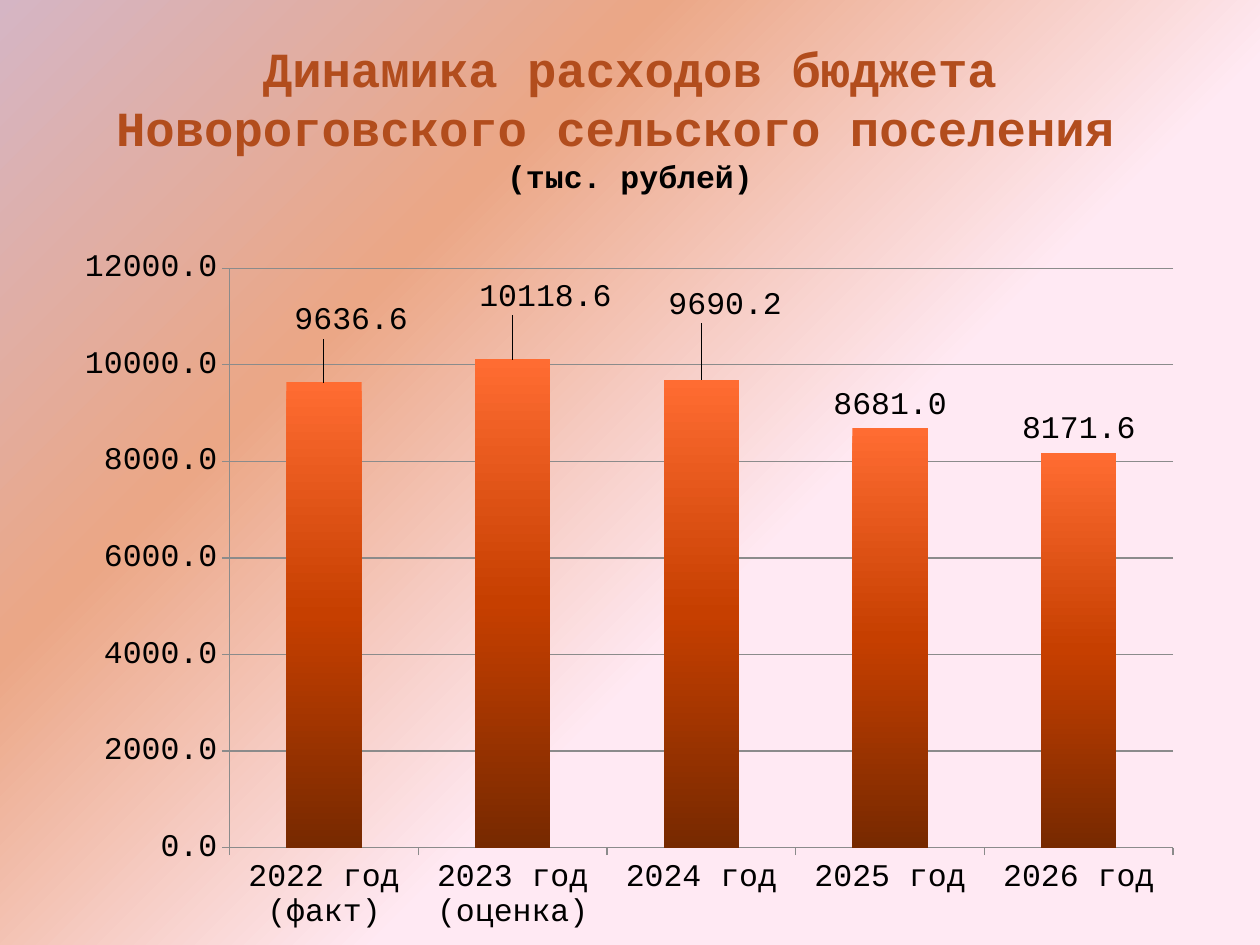
from pptx import Presentation
from pptx.chart.data import CategoryChartData
from pptx.dml.color import RGBColor
from pptx.enum.chart import XL_CHART_TYPE as ChartType
from pptx.enum.chart import XL_LABEL_POSITION as LabelPosition
from pptx.enum.chart import XL_TICK_MARK as TickMark
from pptx.enum.text import MSO_ANCHOR as Anchor
from pptx.enum.text import PP_ALIGN as Align
from pptx.oxml import parse_xml
from pptx.oxml.ns import nsdecls
from pptx.util import Inches, Pt

FONT = "Courier New"
BLACK = RGBColor(0x00, 0x00, 0x00)
RUST = RGBColor(0xB2, 0x4D, 0x1D)
GRAY = RGBColor(0x8B, 0x8B, 0x8B)
PINK = RGBColor(0xFF, 0xE9, 0xF3)
PEACH = RGBColor(0xEB, 0xA7, 0x86)
MAUVE = RGBColor(0xD5, 0xB5, 0xC4)
BAR_TOP = RGBColor(0xFF, 0x6C, 0x32)
BAR_MIDDLE = RGBColor(0xC6, 0x3F, 0x00)
BAR_BOTTOM = RGBColor(0x77, 0x29, 0x00)

TITLE_RUNS = [
    ("Динамика расходов бюджета Новороговского сельского поселения ",
     {"size": Pt(28), "bold": True, "name": FONT}, RUST),
    ("(тыс. рублей)", {"size": Pt(18), "bold": True, "name": FONT}, BLACK),
]
EXPENSES = [
    ("2022 год (факт)", 9636.6),
    ("2023 год (оценка)", 10118.6),
    ("2024 год", 9690.2),
    ("2025 год", 8681.0),
    ("2026 год", 8171.6),
]
# Shift of the first labels from their usual place, in parts of the chart
LABEL_SHIFTS = [(0.024, -0.054), (0.029, -0.054), (0.021, -0.072)]
PLOT_AREA = {"x": 0.147, "y": 0.046, "w": 0.832, "h": 0.817}
BACKGROUND_STOPS = [(40, PINK), (70, PEACH), (100, MAUVE)]
BAR_STOPS = [(0, BAR_TOP), (50, BAR_MIDDLE), (100, BAR_BOTTOM)]


def gradient_xml(stops, direction):
    stop_xml = "".join(
        f'<a:gs pos="{percent * 1000}"><a:srgbClr val="{color}"/></a:gs>'
        for percent, color in stops)
    return (f'<a:gradFill {nsdecls("a")} rotWithShape="1">'
            f"<a:gsLst>{stop_xml}</a:gsLst>{direction}</a:gradFill>")


def layout_element(values, modes=""):
    parts = "".join(f'<c:{key} val="{value}"/>' for key, value in values.items())
    return parse_xml(f'<c:layout {nsdecls("c")}><c:manualLayout>{modes}{parts}'
                     "</c:manualLayout></c:layout>")


def set_font(font, values, color):
    for name, value in values.items():
        setattr(font, name, value)
    font.color.rgb = color


def add_background(slide):
    direction = ('<a:path path="circle"><a:fillToRect l="100000" t="100000"/>'
                 "</a:path>")
    background = parse_xml(
        f'<p:bg {nsdecls("p")}><p:bgPr>{gradient_xml(BACKGROUND_STOPS, direction)}'
        f'<a:effectLst {nsdecls("a")}/></p:bgPr></p:bg>')
    slide.element.cSld.insert(0, background)


def add_title(slide):
    box = slide.shapes.add_textbox(Inches(0.5), Inches(0.3), Inches(9), Inches(1.25))
    frame = box.text_frame
    frame.word_wrap = True
    frame.vertical_anchor = Anchor.MIDDLE
    paragraph = frame.paragraphs[0]
    paragraph.alignment = Align.CENTER
    for index, (text, values, color) in enumerate(TITLE_RUNS):
        if index:
            paragraph.add_line_break()
        run = paragraph.add_run()
        run.text = text
        set_font(run.font, values, color)


def add_expense_chart(slide):
    data = CategoryChartData(number_format="0.0")
    data.categories = [year for year, _ in EXPENSES]
    data.add_series("Series 1", [amount for _, amount in EXPENSES])
    chart = slide.shapes.add_chart(
        ChartType.COLUMN_CLUSTERED, Inches(0.5), Inches(1.87),
        Inches(9), Inches(5.63), data).chart
    chart.has_title = chart.has_legend = False
    font_values = {"size": Pt(18), "name": FONT}
    set_font(chart.font, font_values, BLACK)

    value_axis = chart.value_axis
    value_axis.minimum_scale, value_axis.maximum_scale = 0, 12000
    value_axis.major_unit = 2000
    value_axis.tick_labels.number_format = "0.0"
    value_axis.tick_labels.number_format_is_linked = False
    value_axis.has_major_gridlines = True
    for line in (value_axis.format.line, chart.category_axis.format.line,
                 value_axis.major_gridlines.format.line):
        line.color.rgb = GRAY
        line.width = Pt(0.75)
    for axis in (value_axis, chart.category_axis):
        axis.major_tick_mark = TickMark.OUTSIDE

    plot = chart.plots[0]
    plot.gap_width = 150
    plot.vary_by_categories = False
    series = plot.series[0]
    series.format.fill.gradient()
    bar_fill = chart.element.xpath(".//c:ser/c:spPr/a:gradFill")[0]
    direction = '<a:lin ang="5400000" scaled="0"/>'
    bar_fill.getparent().replace(
        bar_fill, parse_xml(gradient_xml(BAR_STOPS, direction)))

    labels = series.data_labels
    labels.show_value = True
    labels.number_format = "0.0"
    labels.number_format_is_linked = False
    labels.position = LabelPosition.OUTSIDE_END
    set_font(labels.font, font_values, BLACK)
    for index in range(len(LABEL_SHIFTS)):
        label = series.points[index].data_label
        set_font(label.font, font_values, BLACK)
        label.position = LabelPosition.OUTSIDE_END
    label_indexes = chart.element.xpath(".//c:dLbl/c:idx")
    for label_index, (x, y) in zip(label_indexes, LABEL_SHIFTS):
        label_index.addnext(layout_element({"x": x, "y": y}))

    plot_area = chart.element.xpath(".//c:plotArea")[0]
    for layout in plot_area.xpath("./c:layout"):
        plot_area.remove(layout)
    modes = ('<c:layoutTarget val="inner"/><c:xMode val="edge"/>'
             '<c:yMode val="edge"/>')
    plot_area.insert(0, layout_element(PLOT_AREA, modes))


def main():
    presentation = Presentation()
    presentation.slide_width = Inches(10)
    presentation.slide_height = Inches(7.5)
    slide = presentation.slides.add_slide(presentation.slide_layouts[6])
    add_background(slide)
    add_expense_chart(slide)
    add_title(slide)
    presentation.save("out.pptx")


if __name__ == "__main__":
    main()
